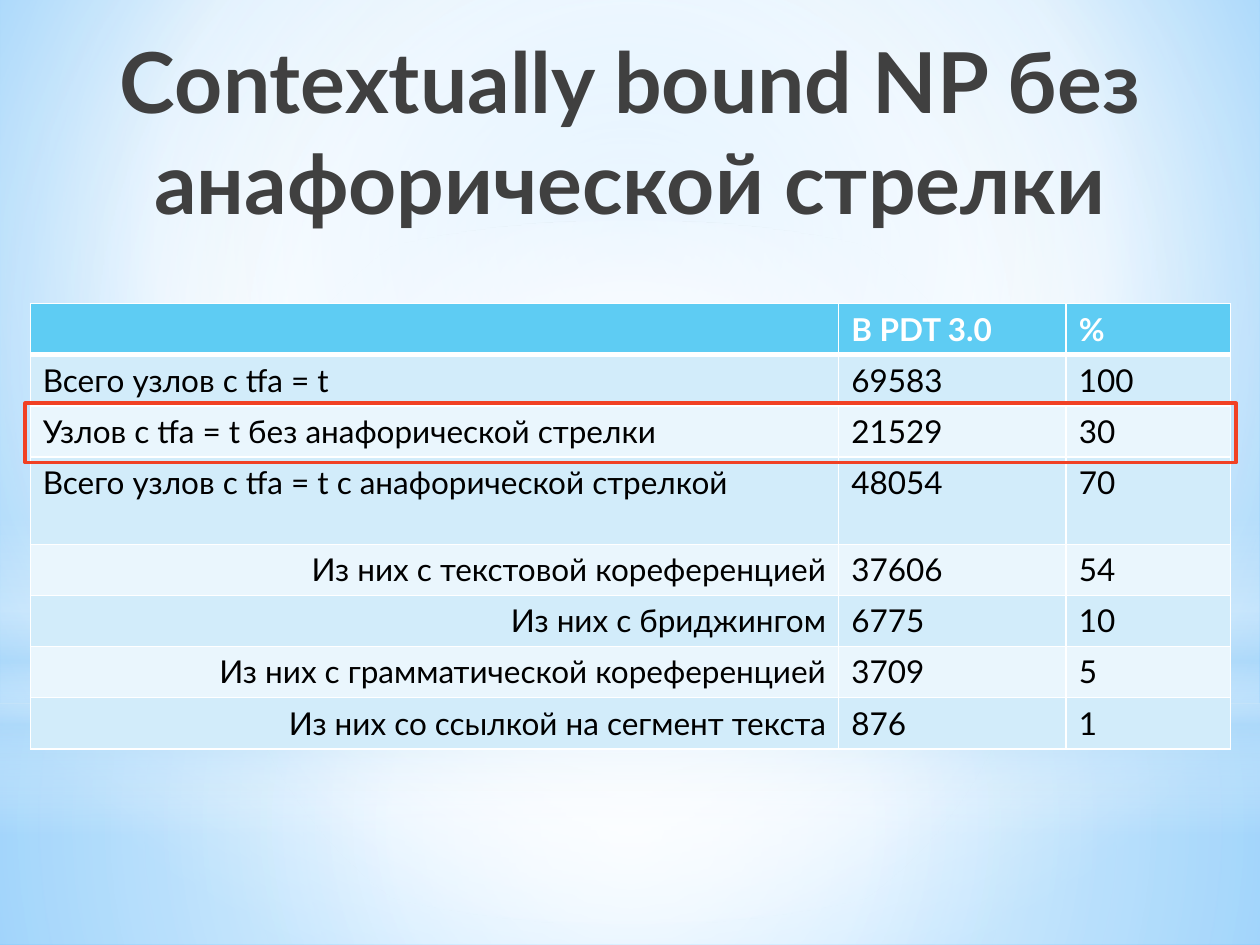
from pptx import Presentation
from pptx.dml.color import RGBColor as RGB
from pptx.enum.shapes import MSO_SHAPE as SHAPE
from pptx.enum.text import MSO_ANCHOR as ANCHOR, PP_ALIGN as ALIGN
from pptx.oxml import parse_xml
from pptx.oxml.ns import nsdecls, qn
from pptx.util import Pt

# Content
TITLE = "Сontextually bound NP без анафорической стрелки"
HEADER = ("", "В PDT 3.0", "%")
TOTALS = [
    ("Всего узлов с tfa = t", "69583", "100"),
    ("Узлов с tfa = t без анафорической стрелки", "21529", "30"),
    ("Всего узлов с tfa = t с анафорической стрелкой", "48054", "70"),
]
DETAILS = [
    ("Из них с текстовой кореференцией", "37606", "54"),
    ("Из них с бриджингом", "6775", "10"),
    ("Из них с грамматической кореференцией", "3709", "5"),
    ("Из них со ссылкой на сегмент текста", "876", "1"),
]
ROWS = [HEADER, *TOTALS, *DETAILS]

# Style and layout, in points
FONT = "Lato"
COLORS = {
    "title": "404040", "text": "000000", "white": "FFFFFF", "header": "5ECCF3",
    "odd": "D2ECFA", "even": "EAF6FD", "mark": "F14124",
    "sky": "9ED5FF", "deep": "5BB9FF", "haze": "B4DCFA",
}
W, H = 720, 540
TABLE_LEFT, TABLE_TOP = 17.3, 173.5
COL_WIDTHS = (462, 130, 94)
ROW_HEIGHT, TALL_ROW_HEIGHT = 29.2, 50
TALL_ROW, MARKED_ROW = 3, 2

# Gradient stops: position %, colour, opacity %
CENTER = (50, 50, 50, 50)
BACKGROUND = [(0, "sky", 100), (60, "white", 100), (100, "deep", 100)]
BACKDROP = [
    (SHAPE.RECTANGLE, (0, 401.8, W, 138.2), CENTER,
     [(0, "white", 91), (37, "white", 76), (100, "haze", 79)]),
    (SHAPE.RECTANGLE, (0, 0, W, 401.8), CENTER,
     [(0, "white", 89), (48, "white", 62), (100, "haze", 79)]),
    (SHAPE.RECTANGLE, (0, 296.6, W, 180), None,
     [(0, "white", 0), (29, "white", 30), (45, "haze", 40),
      (55, "white", 26), (65, "haze", 60), (100, "white", 0)]),
    (SHAPE.OVAL, (0, 126, W, 401.8), CENTER,
     [(0, "white", 100), (56, "white", 0)]),
]


def rgb(name):
    return RGB.from_string(COLORS[name])


def set_gradient(owner, fill, stops, focus):
    """Circular gradient around focus, or a vertical one without it."""
    fill.solid()
    solid = next(owner.element.iter(qn("a:solidFill")))
    gs = "".join(
        f'<a:gs pos="{pos * 1000}"><a:srgbClr val="{COLORS[color]}">'
        f'<a:alpha val="{alpha * 1000}"/></a:srgbClr></a:gs>'
        for pos, color, alpha in stops)
    if focus:
        sides = " ".join(f'{k}="{v * 1000}"' for k, v in zip("ltrb", focus))
        shade = f'<a:path path="circle"><a:fillToRect {sides}/></a:path>'
    else:
        shade = '<a:lin ang="5400000" scaled="0"/>'
    solid.getparent().replace(solid, parse_xml(
        f'<a:gradFill {nsdecls("a")} rotWithShape="1">'
        f'<a:gsLst>{gs}</a:gsLst>{shade}</a:gradFill>'))


def add_shape(s, kind, box):
    sp = s.shapes.add_shape(kind, *map(Pt, box))
    sp.shadow.inherit = False
    return sp


def write(tf, text, align, color, **font):
    p = tf.paragraphs[0]
    p.alignment = align
    r = p.add_run()
    r.text = text
    r.font.color.rgb = rgb(color)
    for name, value in {"name": FONT, **font}.items():
        setattr(r.font, name, value)


def set_borders(cell, bottom):
    tc_pr = cell._tc.get_or_add_tcPr()
    for i, (side, width) in enumerate(zip("LRTB", (1, 1, 1, bottom))):
        tc_pr.insert(i, parse_xml(
            f'<a:ln{side} {nsdecls("a")} w="{Pt(width)}"><a:solidFill>'
            f'<a:srgbClr val="{COLORS["white"]}"/></a:solidFill></a:ln{side}>'))


def add_backdrop(s):
    set_gradient(s, s.background.fill, BACKGROUND, (20, 10, 20, 60))
    for kind, box, focus, stops in BACKDROP:
        sp = add_shape(s, kind, box)
        sp.line.fill.background()
        set_gradient(sp, sp.fill, stops, focus)


def add_title(s):
    title = s.shapes.title
    title.element.getparent().append(title.element)  # in front of the backdrop
    box = {"left": 0, "top": 9.4, "width": W, "height": 130.3}
    for name, value in box.items():
        setattr(title, name, Pt(value))
    tf = title.text_frame
    tf.word_wrap = True
    tf.vertical_anchor = ANCHOR.MIDDLE
    write(tf, TITLE, ALIGN.CENTER, "title", size=Pt(48), bold=True)


def add_counts(s, heights):
    frame = s.shapes.add_table(
        len(ROWS), len(HEADER), Pt(TABLE_LEFT), Pt(TABLE_TOP),
        Pt(sum(COL_WIDTHS)), Pt(sum(heights)))
    table = frame.table
    for col, width in zip(table.columns, COL_WIDTHS):
        col.width = Pt(width)
    for i, (values, height) in enumerate(zip(ROWS, heights)):
        table.rows[i].height = Pt(height)
        head = i == 0
        for j, text in enumerate(values):
            cell = table.cell(i, j)
            cell.fill.solid()
            cell.fill.fore_color.rgb = rgb("header" if head else "odd" if i % 2 else "even")
            set_borders(cell, 3 if head else 1)
            detail = j == 0 and i > len(TOTALS)
            write(cell.text_frame, text, ALIGN.RIGHT if detail else ALIGN.LEFT,
                  "white" if head else "text", size=Pt(18), bold=head)


def add_mark(s, heights):
    top = TABLE_TOP + sum(heights[:MARKED_ROW]) - 1.5
    sp = add_shape(s, SHAPE.RECTANGLE, (14.4, top, 692, 34))
    sp.fill.background()
    sp.line.color.rgb = rgb("mark")
    sp.line.width = Pt(2)


def main():
    prs = Presentation()
    prs.slide_width, prs.slide_height = Pt(W), Pt(H)
    s = prs.slides.add_slide(prs.slide_layouts[5])
    heights = [TALL_ROW_HEIGHT if i == TALL_ROW else ROW_HEIGHT
               for i in range(len(ROWS))]
    add_backdrop(s)
    add_title(s)
    add_counts(s, heights)
    add_mark(s, heights)
    prs.save("out.pptx")


if __name__ == "__main__":
    main()
